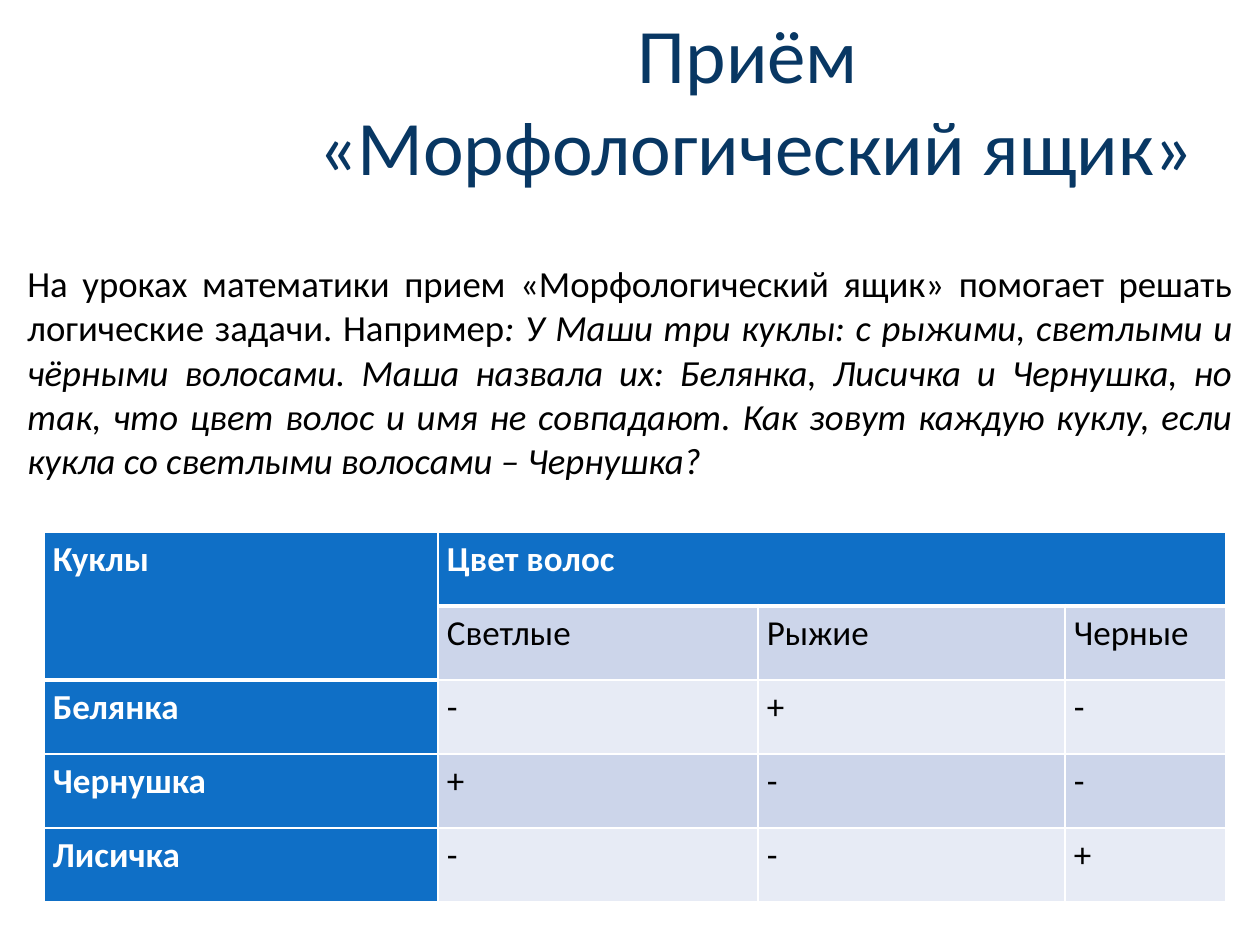
from lxml import etree
from pptx import Presentation
from pptx import util as u
from pptx.dml.color import RGBColor
from pptx.enum import text
from pptx.oxml import ns

PX = u.Inches(1) / 126
FONT = "Calibri"
BLUE, NAVY, WHITE, BLACK = "0F6FC6", "083763", "FFFFFF", "000000"
BANDS = ["CCD5EA", "E7EBF5"]

COLUMNS = [394, 320, 307, 161]
ROW_HEIGHT = 74
ROWS = [
    ["Куклы", "Цвет волос", "", ""],
    ["", "Светлые", "Рыжие", "Черные"],
    ["Белянка", "-", "+", "-"],
    ["Чернушка", "+", "-", "-"],
    ["Лисичка", "-", "-", "+"],
]
TASK_INTRO = (
    "На уроках математики прием «Морфологический ящик» помогает решать "
    "логические задачи. Например"
)
TASK = (
    ": У Маши три куклы: с рыжими, светлыми и чёрными волосами. Маша назвала "
    "их: Белянка, Лисичка и Чернушка, но так, что цвет волос и имя не "
    "совпадают. Как зовут каждую куклу, если кукла со светлыми волосами – "
    "Чернушка?"
)


def px(length):
    return u.Emu(round(length * PX))


def color(code):
    return RGBColor.from_string(code)


def style(run, size, code, bold=False, italic=False):
    font = run.font
    font.name, font.size, font.bold, font.italic = FONT, u.Pt(size), bold, italic
    font.color.rgb = color(code)


def add_text_frame(slide, box, wrap):
    frame = slide.shapes.add_textbox(*map(px, box)).text_frame
    frame.word_wrap = wrap
    return frame


def add_title(slide, box):
    title = add_text_frame(slide, box, wrap=False)
    title.text = "Приём \n«Морфологический ящик»"
    for line in title.paragraphs:
        line.alignment = text.PP_ALIGN.CENTER
        style(line.runs[0], 44, NAVY)


def add_task(slide, box):
    task = add_text_frame(slide, box, wrap=True).paragraphs[0]
    task.alignment = text.PP_ALIGN.JUSTIFY
    for words, italic in [(TASK_INTRO, False), (TASK, True)]:
        run = task.add_run()
        run.text = words
        style(run, 21, BLACK, italic=italic)


def set_borders(cell, top, bottom):
    properties = cell._tc.get_or_add_tcPr()
    for side, points in [("L", 1), ("R", 1), ("T", top), ("B", bottom)]:
        line = etree.SubElement(
            properties, ns.qn(f"a:ln{side}"), w=str(u.Pt(points))
        )
        fill = etree.SubElement(line, ns.qn("a:solidFill"))
        etree.SubElement(fill, ns.qn("a:srgbClr"), val=WHITE)


def fill_cell(cell, row, column):
    # The heading ends under row 1 in the first column, under row 0 elsewhere
    heading_end = 1 if column == 0 else 0
    set_borders(
        cell,
        top=3 if row == heading_end + 1 else 1,
        bottom=3 if row <= heading_end else 1,
    )
    heading = row == 0 or column == 0
    cell.fill.solid()
    cell.fill.fore_color.rgb = color(BLUE if heading else BANDS[(row - 1) % 2])
    cell.margin_left = cell.margin_right = px(9)
    cell.margin_top = cell.margin_bottom = 0
    cell.text_frame.text = ROWS[row][column]
    paragraph = cell.text_frame.paragraphs[0]
    paragraph.line_spacing = 1.15
    paragraph.space_after = u.Pt(8)
    for run in paragraph.runs:
        style(run, 20, WHITE if heading else BLACK, bold=heading)


def add_dolls_table(slide, left, top):
    dolls = slide.shapes.add_table(
        len(ROWS), len(COLUMNS), px(left), px(top),
        px(sum(COLUMNS)), px(ROW_HEIGHT * len(ROWS)),
    ).table
    dolls.first_col = True
    for column, width in zip(dolls.columns, COLUMNS):
        column.width = px(width)
    for row in dolls.rows:
        row.height = px(ROW_HEIGHT)
    for row in range(len(ROWS)):
        for column in range(len(COLUMNS)):
            fill_cell(dolls.cell(row, column), row, column)
    dolls.cell(0, 0).merge(dolls.cell(1, 0))
    dolls.cell(0, 1).merge(dolls.cell(0, 3))


def main():
    deck = Presentation()
    deck.slide_width, deck.slide_height = px(1260), px(945)
    slide = deck.slides.add_slide(deck.slide_layouts[6])
    add_dolls_table(slide, 44, 532)
    add_title(slide, (287, 0, 939, 199))
    add_task(slide, (15, 255, 1230, 280))
    deck.save("out.pptx")


if __name__ == "__main__":
    main()
